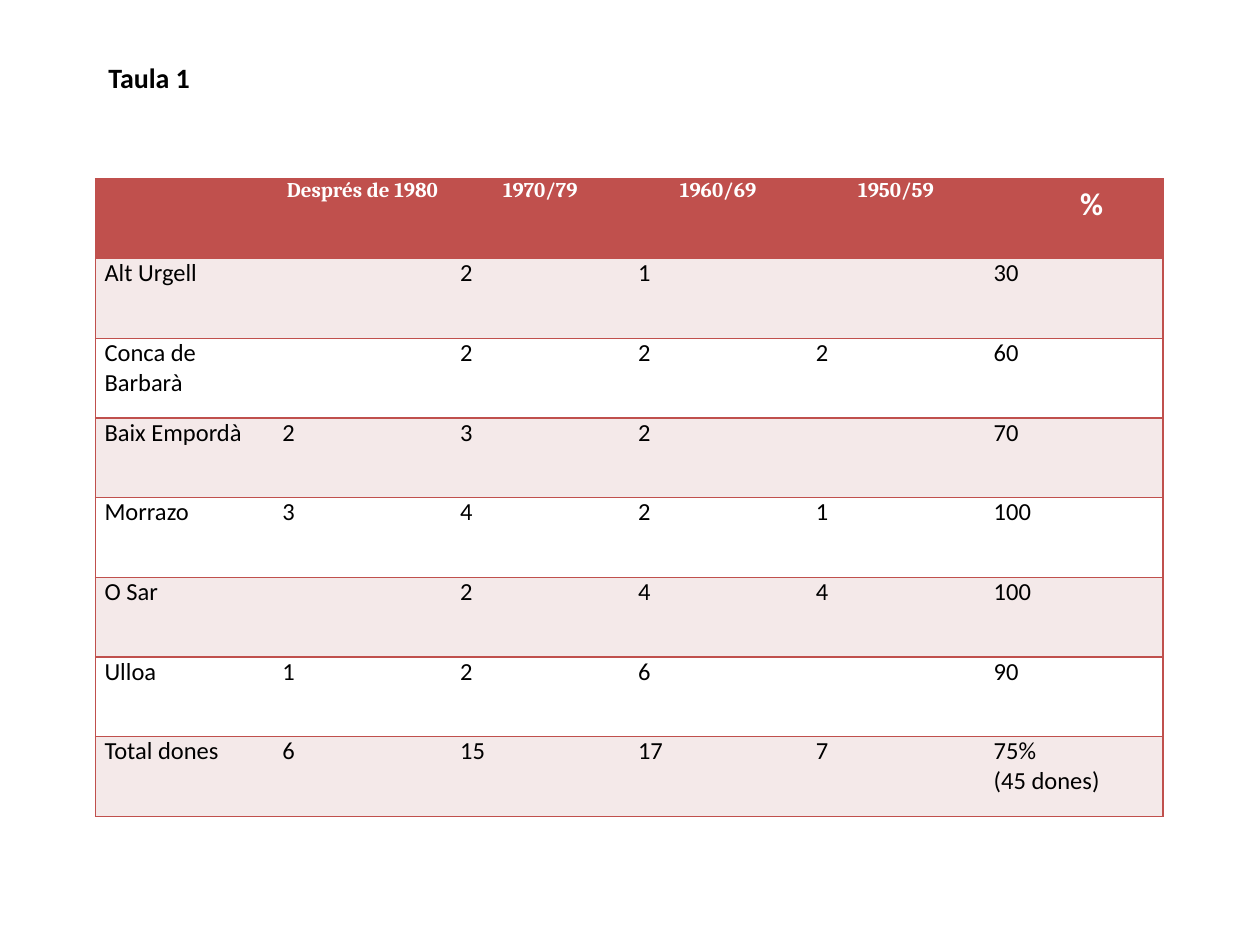
import pptx
import pptx.util
import pptx.dml.color
import pptx.enum.text
import pptx.oxml.ns
from lxml import etree

Inches, Pt = pptx.util.Inches, pptx.util.Pt
ALIGN = pptx.enum.text.PP_ALIGN

# Content
TITLE = "Taula 1"
HEADER = ["", "Després de 1980", "1970/79", "1960/69", "1950/59", "%"]
ROWS = [
    ["Alt Urgell", "", "2", "1", "", "30"],
    ["Conca de Barbarà", "", "2", "2", "2", "60"],
    ["Baix Empordà", "2", "3", "2", "", "70"],
    ["Morrazo", "3", "4", "2", "1", "100"],
    ["O Sar", "", "2", "4", "4", "100"],
    ["Ulloa", "1", "2", "6", "", "90"],
    ["Total dones", "6", "15", "17", "7", "75%\n(45 dones)"],
]
RED, PINK, WHITE, BLACK = "C0504D", "F4E9E9", "FFFFFF", "000000"
LEFT, WIDTH = 0.76, 8.47
TABLE_TOP, TABLE_HEIGHT = 1.42, 5.06


def rgb(value):
    return pptx.dml.color.RGBColor.from_string(value)


def write(tf, text, size, font, color, bold, align):
    for i, line in enumerate(text.split("\n")):
        p = tf.paragraphs[0] if i == 0 else tf.add_paragraph()
        p.alignment = align
        p.font.size = Pt(size)
        if line:
            r = p.add_run()
            r.text = line
            r.font.size, r.font.name, r.font.bold = Pt(size), font, bold
            r.font.color.rgb = rgb(color)


def set_borders(cell, visible):
    qn = pptx.oxml.ns.qn
    tcPr = cell._tc.get_or_add_tcPr()
    for side in "LRTB":
        ln = etree.SubElement(tcPr, qn("a:ln" + side), w=str(Pt(1)))
        if side in visible:
            fill = etree.SubElement(ln, qn("a:solidFill"))
            etree.SubElement(fill, qn("a:srgbClr"), val=RED)
        else:
            etree.SubElement(ln, qn("a:noFill"))


prs = pptx.Presentation()
prs.slide_width, prs.slide_height = Inches(10), Inches(7.5)
s = prs.slides.add_slide(prs.slide_layouts[5])

# Title
sp = s.shapes.title
sp.left, sp.top, sp.width, sp.height = map(Inches, (LEFT, 0.43, WIDTH, 0.37))
tf = sp.text_frame
tf.word_wrap = True
tf.auto_size = pptx.enum.text.MSO_AUTO_SIZE.NONE
tf.vertical_anchor = pptx.enum.text.MSO_ANCHOR.TOP
write(tf, TITLE, 16, "Calibri", BLACK, True, ALIGN.JUSTIFY)

# Table
data = [HEADER] + ROWS
last = len(HEADER) - 1
table = s.shapes.add_table(len(data), len(HEADER), Inches(LEFT), Inches(TABLE_TOP),
                           Inches(WIDTH), Inches(TABLE_HEIGHT)).table
table.horz_banding = False
for i, row in enumerate(data):
    for j, text in enumerate(row):
        cell = table.cell(i, j)
        percent_head = i == 0 and j == last
        set_borders(cell, "TB" + ("L" if j == 0 else "R" if j == last else ""))
        cell.fill.solid()
        cell.fill.fore_color.rgb = rgb(RED if i == 0 else PINK if i % 2 else WHITE)
        if percent_head:
            cell.margin_left = Inches(0.38)
        else:
            cell.margin_left = cell.margin_right = Inches(0.07)
            cell.margin_top = cell.margin_bottom = 0
        if percent_head:
            style = (18, "Calibri", WHITE, True, ALIGN.CENTER)
        elif i == 0:
            style = (12, "Cambria", WHITE, True, ALIGN.CENTER)
        else:
            style = (14, "Calibri", BLACK, False, ALIGN.LEFT)
        write(cell.text_frame, text, *style)

prs.save("out.pptx")
